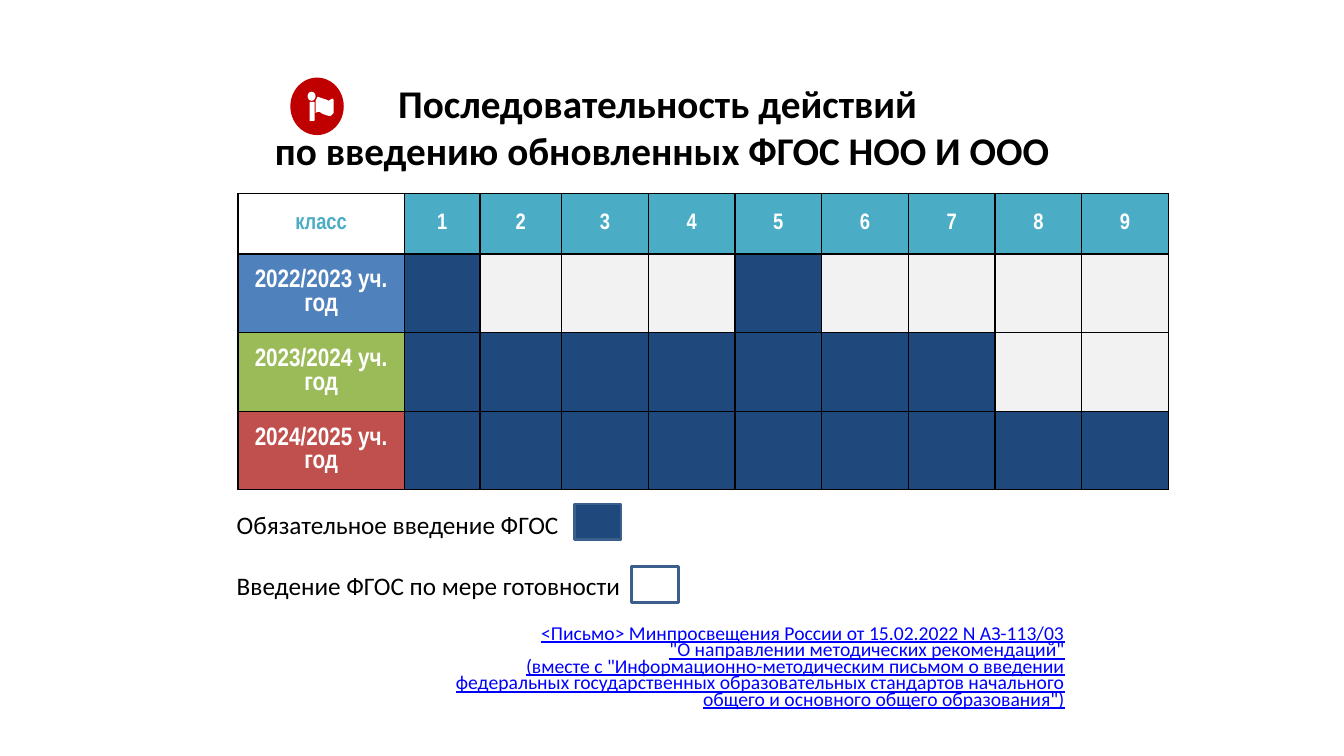
from lxml.etree import SubElement
from pptx import Presentation
from pptx.dml.color import RGBColor
from pptx.enum.shapes import MSO_SHAPE
from pptx.enum.text import MSO_ANCHOR, PP_ALIGN
from pptx.oxml.ns import qn
from pptx.util import Inches, Pt

WHITE, BLACK, NAVY, PALE = "FFFFFF", "000000", "1F497D", "F2F2F2"
RED, TEAL, OUTLINE, LINK = "C00000", "4BACC6", "3A5F8C", "0000FF"


def color(value):
    return RGBColor.from_string(value)


class SlideBuilder:
    text_font = "Calibri"
    table_font = "Arial Narrow"

    def __init__(self, page):
        self.page = page

    def span(self, para, text, size, ink=BLACK, bold=False, underline=False, font=None):
        run = para.add_run()
        run.text = text
        run.font.name = font or self.text_font
        run.font.size = Pt(size)
        run.font.bold = bold
        run.font.underline = underline
        run.font.color.rgb = color(ink)

    def frame(self, box, inset=0.1, anchor=MSO_ANCHOR.TOP):
        frame = box.text_frame
        frame.word_wrap = True
        frame.vertical_anchor = anchor
        frame.margin_left = frame.margin_right = Inches(0.1)
        frame.margin_top = frame.margin_bottom = Inches(inset)
        return frame

    def title(self, lines, left, top, width, height):
        box = self.page.shapes.title
        box.left, box.top = Inches(left), Inches(top)
        box.width, box.height = Inches(width), Inches(height)
        frame = self.frame(box)
        for index, line in enumerate(lines):
            para = frame.add_paragraph() if index else frame.paragraphs[0]
            para.alignment = PP_ALIGN.CENTER
            para.space_before = Pt(0)
            self.span(para, line, 28, bold=True)

    def textbox(self, left, top, width, height, inset):
        box = self.page.shapes.add_textbox(
            Inches(left), Inches(top), Inches(width), Inches(height))
        return self.frame(box, inset)

    def paint(self, shape, fill, line=None):
        shape.shadow.inherit = False
        shape.fill.solid()
        shape.fill.fore_color.rgb = color(fill)
        if line:
            shape.line.color.rgb = color(line)
            shape.line.width = Pt(2)
        else:
            shape.line.fill.background()

    def shape(self, kind, left, top, width, height, fill, line=None):
        shape = self.page.shapes.add_shape(
            kind, Inches(left), Inches(top), Inches(width), Inches(height))
        self.paint(shape, fill, line)
        return shape

    def outline(self, points, fill):
        corners = [(Inches(x), Inches(y)) for x, y in points]
        builder = self.page.shapes.build_freeform(*corners[0])
        builder.add_line_segments(corners[1:], close=True)
        self.paint(builder.convert_to_shape(), fill)

    def table(self, left, top, widths, heights):
        table = self.page.shapes.add_table(
            len(heights), len(widths), Inches(left), Inches(top),
            Inches(sum(widths)), Inches(sum(heights))).table
        table.first_row = table.horz_banding = False
        for column, width in zip(table.columns, widths):
            column.width = Inches(width)
        for row, height in zip(table.rows, heights):
            row.height = Inches(height)
        return table

    def cell(self, cell, fill=None, text=None, size=16, ink=WHITE):
        cell.vertical_anchor = MSO_ANCHOR.MIDDLE
        cell.margin_left = cell.margin_right = Inches(0.1)
        cell.margin_top = cell.margin_bottom = Inches(0.1)
        properties = cell._tc.get_or_add_tcPr()
        for side in ("lnL", "lnR", "lnT", "lnB"):
            border = SubElement(properties, qn(f"a:{side}"), w=str(Pt(1)))
            solid = SubElement(border, qn("a:solidFill"))
            SubElement(solid, qn("a:srgbClr"), val=BLACK)
        if fill:
            cell.fill.solid()
            cell.fill.fore_color.rgb = color(fill)
        else:
            cell.fill.background()
        if text:
            para = cell.text_frame.paragraphs[0]
            para.alignment = PP_ALIGN.CENTER
            self.span(para, text, size, ink, bold=True, font=self.table_font)


def add_icon(builder):
    builder.shape(MSO_SHAPE.OVAL, 2.88, 0.77, 0.53, 0.57, RED)
    builder.shape(MSO_SHAPE.OVAL, 3.05, 0.91, 0.08, 0.09, WHITE)
    builder.shape(MSO_SHAPE.ROUNDED_RECTANGLE, 3.07, 1.01, 0.05, 0.19, WHITE)
    builder.outline([
        (3.15, 0.96), (3.18, 0.97), (3.21, 0.98), (3.24, 0.99), (3.26, 1),
        (3.29, 0.98), (3.3, 0.98), (3.31, 0.99), (3.31, 1.12), (3.3, 1.13),
        (3.28, 1.15), (3.26, 1.15), (3.23, 1.14), (3.2, 1.13), (3.17, 1.11),
        (3.15, 1.11), (3.13, 1.12), (3.13, 1), (3.14, 0.98)], WHITE)


def add_schedule(builder):
    years = [
        ("2022/2023 уч. год", "4F81BD", {1, 5}),
        ("2023/2024 уч. год", "9BBB59", set(range(1, 8))),
        ("2024/2025 уч. год", "C0504D", set(range(1, 10))),
    ]
    table = builder.table(2.36, 1.92, [1.65, 0.75, 0.81] + [0.86] * 7, [0.6] + [0.78] * 3)
    builder.cell(table.cell(0, 0), text="класс", ink=TEAL)
    for grade in range(1, 10):
        builder.cell(table.cell(0, grade), TEAL, str(grade))
    for row, (year, fill, required) in enumerate(years, 1):
        builder.cell(table.cell(row, 0), fill, year, 18)
        for grade in range(1, 10):
            builder.cell(table.cell(row, grade), NAVY if grade in required else PALE)


def add_legend(builder):
    frame = builder.textbox(2.25, 5, 5.13, 1.01, 0.05)
    builder.span(frame.paragraphs[0], "Обязательное введение ФГОС", 18)
    para = frame.add_paragraph()
    para.space_before = Pt(22)
    builder.span(para, "Введение ФГОС по мере готовности", 18)
    builder.shape(MSO_SHAPE.RECTANGLE, 5.7, 5, 0.46, 0.35, NAVY, OUTLINE)
    builder.shape(MSO_SHAPE.RECTANGLE, 6.26, 5.62, 0.47, 0.36, WHITE, OUTLINE)


def add_reference(builder):
    lines = [
        "<Письмо> Минпросвещения России от 15.02.2022 N АЗ-113/03",
        '"О направлении методических рекомендаций"',
        '(вместе с "Информационно-методическим письмом о введении федеральных '
        'государственных образовательных стандартов начального общего и '
        'основного общего образования")',
    ]
    para = builder.textbox(4.16, 6.12, 6.5, 1.01, 0.1).paragraphs[0]
    para.alignment = PP_ALIGN.RIGHT
    para.line_spacing = 0.7
    for index, line in enumerate(lines):
        if index:
            para.add_line_break()
        builder.span(para, line, 14, LINK, underline=True)


def main():
    deck = Presentation()
    deck.slide_width, deck.slide_height = Inches(13.33), Inches(7.5)
    builder = SlideBuilder(deck.slides.add_slide(deck.slide_layouts[5]))
    builder.title(["Последовательность действий ",
                   "по введению обновленных ФГОС НОО И ООО"], 2.47, 0.69, 8.19, 1)
    add_icon(builder)
    add_schedule(builder)
    add_legend(builder)
    add_reference(builder)
    deck.save("out.pptx")


if __name__ == "__main__":
    main()
